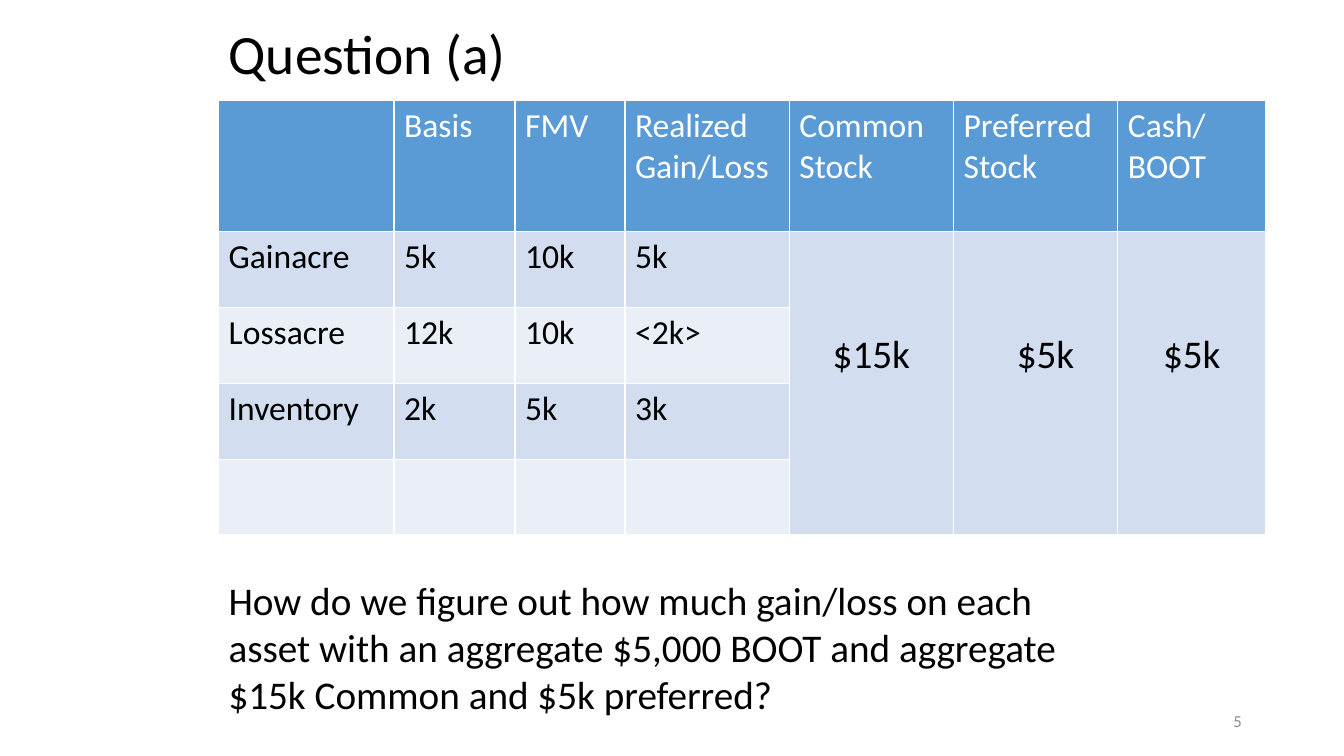
from lxml import etree
from pptx import Presentation
from pptx.dml.color import RGBColor
from pptx.enum import text
from pptx.oxml import ns
from pptx.util import Cm, Pt

BLACK = RGBColor(0, 0, 0)
WHITE = RGBColor(255, 255, 255)
GREY = RGBColor(0x8C, 0x8C, 0x8C)
BLUE = RGBColor(0x5B, 0x9B, 0xD5)
LIGHT = RGBColor(0xD2, 0xDE, 0xEF)
PALE = RGBColor(0xEA, 0xEF, 0xF7)

HEADS = ["", "Basis", "FMV", "Realized\nGain/Loss", "Common Stock",
         "Preferred\nStock", "Cash/\nBOOT"]
ASSETS = [["Gainacre", "5k", "10k", "5k"],
          ["Lossacre", "12k", "10k", "<2k>"],
          ["Inventory", "2k", "5k", "3k"],
          [""] * 4]
PAID = ["$15k", "$5k", "$5k"]
WIDTHS = [4.42, 3.05, 2.77, 4.14, 4.14, 4.14, 3.73]
LEFT = 5.51
ASK = ("How do we figure out how much gain/loss on each asset with an "
       "aggregate $5,000 BOOT and aggregate $15k Common and $5k preferred?")


def style(frame, size, color, align=None):
    for para in frame.paragraphs:
        para.alignment = align
        for font in [para.font] + [run.font for run in para.runs]:
            font.name = "Calibri"
            font.size = Pt(size)
            font.bold = False
            font.color.rgb = color


def add_title(slide, left, top, width, height):
    title = slide.shapes.title
    title.left, title.top = Cm(left), Cm(top)
    title.width, title.height = Cm(width), Cm(height)
    frame = title.text_frame
    frame.text = "Question (a)"
    frame.auto_size = text.MSO_AUTO_SIZE.NONE
    frame.vertical_anchor = text.MSO_ANCHOR.MIDDLE
    style(frame, 39.6, BLACK, text.PP_ALIGN.LEFT)
    frame.paragraphs[0].line_spacing = 0.9


def fill_cell(cell, words, size, color, back, align=None):
    cell.text_frame.text = words
    cell.fill.solid()
    cell.fill.fore_color.rgb = back
    style(cell.text_frame, size, color, align)


def add_grid(slide, left, top, head, row):
    count = len(ASSETS)
    grid = slide.shapes.add_table(
        count + 1, len(HEADS), Cm(left), Cm(top),
        Cm(sum(WIDTHS)), Cm(head + count * row)).table
    for col, width in zip(grid.columns, WIDTHS):
        col.width = Cm(width)
    for i, line in enumerate(grid.rows):
        line.height = Cm(row if i else head)
    for j, words in enumerate(HEADS):
        fill_cell(grid.cell(0, j), words, 24, WHITE, BLUE)
    for i, line in enumerate(ASSETS, 1):
        for j, words in enumerate(line):
            fill_cell(grid.cell(i, j), words, 24, BLACK,
                      LIGHT if i % 2 else PALE)
    for j, words in enumerate(PAID, len(ASSETS[0])):
        cell = grid.cell(1, j)
        cell.merge(grid.cell(count, j))
        fill_cell(cell, words, 28, BLACK, LIGHT, text.PP_ALIGN.CENTER)
        cell.margin_top = Cm(2.5)
    grid.cell(1, 5).margin_left = Cm(0.75)


def add_text(slide, words, left, top, width, height):
    box = slide.shapes.add_textbox(Cm(left), Cm(top), Cm(width), Cm(height))
    frame = box.text_frame
    frame.word_wrap = True
    frame.text = words
    return frame


def add_ask(slide, left, top, width, height):
    style(add_text(slide, ASK, left, top, width, height), 28, BLACK)


def add_page(slide, left, top, width, height):
    frame = add_text(slide, "5", left, top, width, height)
    frame.vertical_anchor = text.MSO_ANCHOR.MIDDLE
    style(frame, 12, GREY, text.PP_ALIGN.RIGHT)
    run = frame.paragraphs[0].runs[0]._r
    field = etree.SubElement(run.getparent(), ns.qn("a:fld"))
    field.set("id", "{B6F15528-21DE-4FAA-801E-634DDDAF4B2B}")
    field.set("type", "slidenum")
    field.extend(list(run))
    run.getparent().replace(run, field)


def main():
    deck = Presentation()
    deck.slide_width, deck.slide_height = Cm(33.87), Cm(19.05)
    first = deck.element.get_or_add_sldIdLst().getparent()
    first.set("firstSlideNum", "5")
    slide = deck.slides.add_slide(deck.slide_layouts[5])
    add_title(slide, LEFT, 0.76, 22.86, 1.35)
    add_grid(slide, LEFT, 2.54, 3.3, 1.91)
    add_page(slide, 23.93, 17.65, 7.62, 1.02)
    add_ask(slide, LEFT, 14.4, 22.86, 3.84)
    deck.save("out.pptx")


if __name__ == "__main__":
    main()
